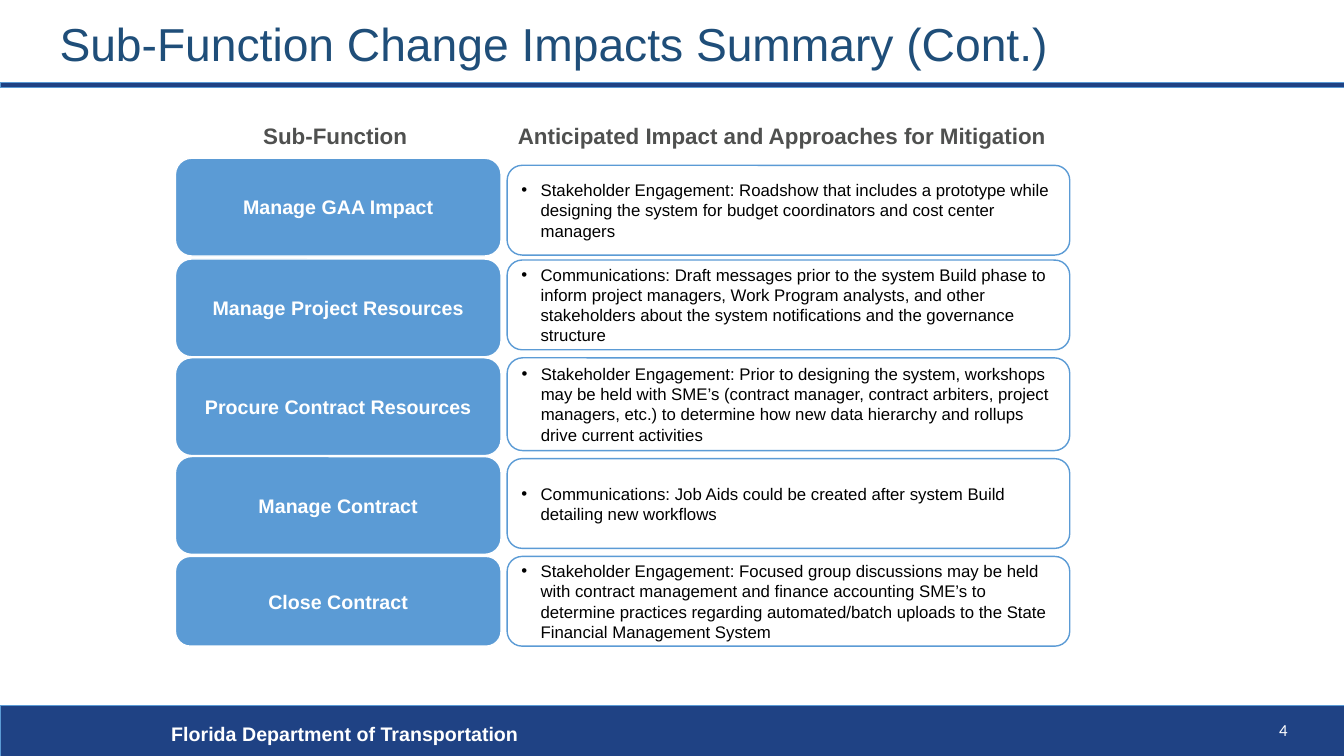
from lxml.etree import SubElement
from pptx import Presentation
from pptx.dml.color import RGBColor
from pptx.enum.shapes import MSO_SHAPE
from pptx.enum.text import MSO_ANCHOR, PP_ALIGN
from pptx.oxml.ns import qn
from pptx.util import Inches, Pt

NAVY = RGBColor(0x1F, 0x42, 0x84)
BLUE = RGBColor(0x5B, 0x9B, 0xD5)
TITLE_BLUE = RGBColor(0x1F, 0x4E, 0x79)
GRAY = RGBColor(0x4F, 0x50, 0x4F)
WHITE = RGBColor(0xFF, 0xFF, 0xFF)
BLACK = RGBColor(0, 0, 0)

CARD_LEFT, CARD_WIDTH = 1.74, 3.23
IMPACT_LEFT, IMPACT_WIDTH = 5.03, 5.58

# Sub-function, card top and height, impact, impact top and height
ROWS = [
    ("Manage GAA Impact", 1.57, 0.97,
     "Stakeholder Engagement: Roadshow that includes a prototype while designing the system "
     "for budget coordinators and cost center managers", 1.64, 0.89),
    ("Manage Project Resources", 2.57, 0.97,
     "Communications: Draft messages prior to the system Build phase to inform project managers, "
     "Work Program analysts, and other stakeholders about the system notifications and the "
     "governance structure", 2.58, 0.89),
    ("Procure Contract Resources", 3.55, 0.97,
     "Stakeholder Engagement: Prior to designing the system, workshops may be held with SME’s "
     "(contract manager, contract arbiters, project managers, etc.) to determine how new data "
     "hierarchy and rollups drive current activities", 3.55, 0.92),
    ("Manage Contract", 4.53, 0.97,
     "Communications: Job Aids could be created after system Build detailing new workflows",
     4.55, 0.89),
    ("Close Contract", 5.52, 0.89,
     "Stakeholder Engagement: Focused group discussions may be held with contract management and "
     "finance accounting SME’s to determine practices regarding automated/batch uploads to the "
     "State Financial Management System", 5.52, 0.89),
]


def write_text(shape, text, size, color, bold=False, font="Arial", align=PP_ALIGN.LEFT,
               anchor=MSO_ANCHOR.MIDDLE, bullet=False, line_spacing=None):
    frame = shape.text_frame
    frame.word_wrap = True
    frame.vertical_anchor = anchor
    paragraph = frame.paragraphs[0]
    paragraph.text = text
    paragraph.alignment = align
    paragraph.line_spacing = line_spacing
    if bullet:
        properties = paragraph._p.get_or_add_pPr()
        properties.set("marL", str(Inches(0.19)))
        properties.set("indent", str(Inches(-0.19)))
        SubElement(properties, qn("a:buFont"), typeface="Arial")
        SubElement(properties, qn("a:buChar"), char="•")
    paragraph.font.size = Pt(size)
    paragraph.font.name = font
    paragraph.font.bold = bold
    paragraph.font.color.rgb = color


def add_box(slide, box, fill, line=None, line_width=1, kind=MSO_SHAPE.ROUNDED_RECTANGLE):
    shape = slide.shapes.add_shape(kind, *map(Inches, box))
    shape.shadow.inherit = False
    shape.fill.solid()
    shape.fill.fore_color.rgb = fill
    if line is None:
        shape.line.fill.background()
    else:
        shape.line.color.rgb = line
        shape.line.width = Pt(line_width)
    return shape


def add_title(slide, box):
    title = slide.shapes.title
    title.left, title.top, title.width, title.height = map(Inches, box)
    write_text(title, "Sub-Function Change Impacts Summary (Cont.)", 33, TITLE_BLUE,
               line_spacing=0.9)


def add_rule(slide, box):
    add_box(slide, box, NAVY, BLUE, 0.5, MSO_SHAPE.RECTANGLE)


def add_footer(slide, box):
    left, top, width, height = box
    add_box(slide, box, NAVY, BLUE, 0.5, MSO_SHAPE.RECTANGLE)
    department = slide.shapes.add_textbox(
        Inches(left + 1.6), Inches(top + 0.11), Inches(7.98), Inches(0.34))
    write_text(department, "Florida Department of Transportation", 14, WHITE, bold=True,
               anchor=MSO_ANCHOR.TOP)
    number = slide.shapes.add_textbox(
        Inches(left + width - 1.59), Inches(top + 0.09), Inches(1.13), Inches(0.3))
    write_text(number, "4", 12, WHITE, font="Calibri", align=PP_ALIGN.RIGHT,
               anchor=MSO_ANCHOR.TOP)


def add_heading(slide, box, text):
    write_text(add_box(slide, box, WHITE), text, 16, GRAY, bold=True, align=PP_ALIGN.CENTER)


def add_card(slide, box, text):
    write_text(add_box(slide, box, BLUE, WHITE), text, 14, WHITE, bold=True,
               align=PP_ALIGN.CENTER)


def add_impact(slide, box, text):
    write_text(add_box(slide, box, WHITE, BLUE), text, 12, BLACK, bullet=True)


def main():
    presentation = Presentation()
    presentation.slide_width = Inches(13.33)
    presentation.slide_height = Inches(7.5)
    slide = presentation.slides.add_slide(presentation.slide_layouts[5])

    add_footer(slide, (0, 7, 13.33, 0.5))
    add_rule(slide, (0, 0.82, 13.33, 0.05))
    add_title(slide, (0.49, 0.1, 11.5, 0.72))
    add_heading(slide, (CARD_LEFT, 1.2, 3.17, 0.3), "Sub-Function")
    add_heading(slide, (4.85, 1.2, 5.81, 0.3),
                "Anticipated Impact and Approaches for Mitigation")
    for name, card_top, card_height, impact, impact_top, impact_height in ROWS:
        add_card(slide, (CARD_LEFT, card_top, CARD_WIDTH, card_height), name)
        add_impact(slide, (IMPACT_LEFT, impact_top, IMPACT_WIDTH, impact_height), impact)

    presentation.save("out.pptx")


if __name__ == "__main__":
    main()
